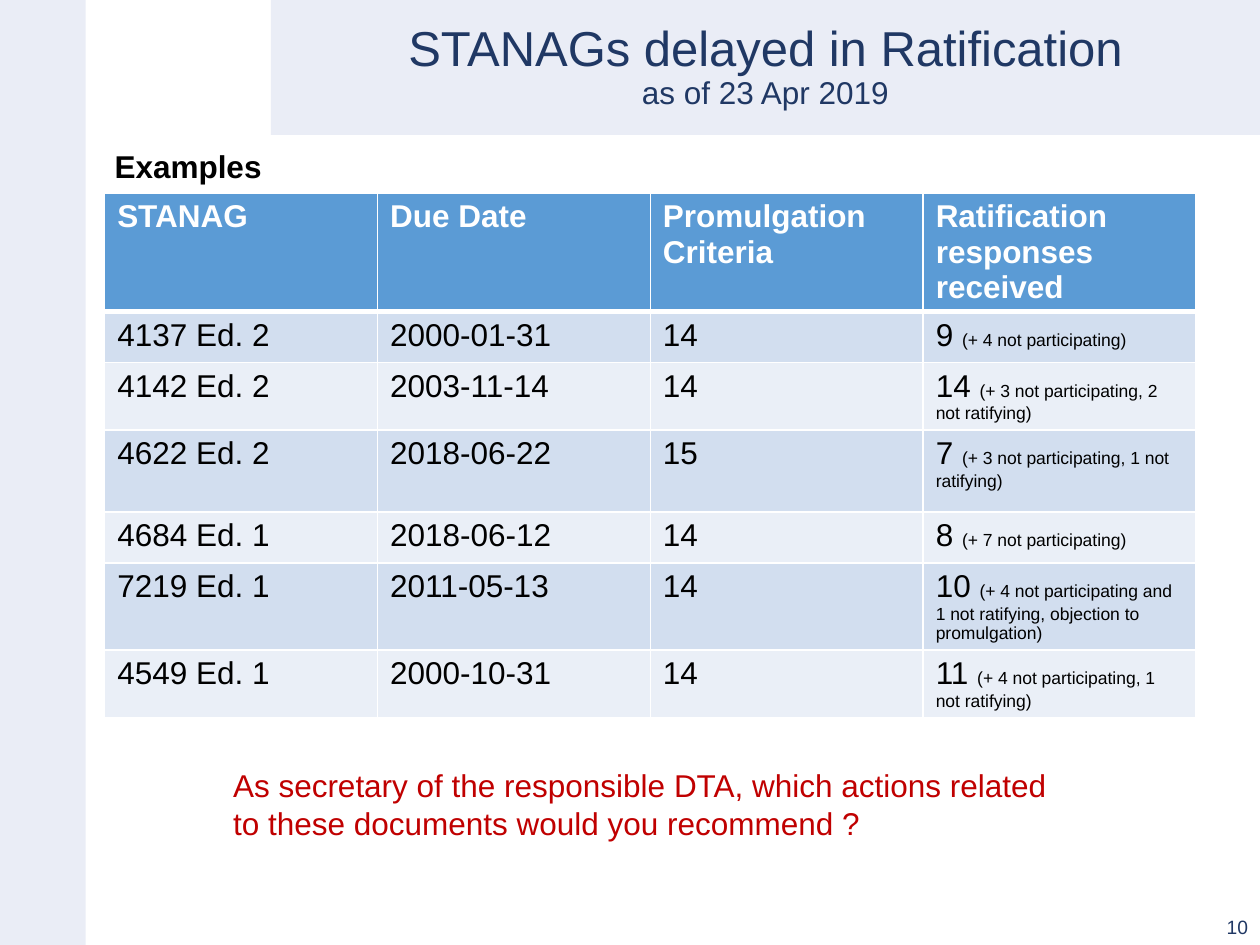
from lxml.etree import SubElement
from pptx import Presentation
from pptx.dml.color import RGBColor
from pptx.enum.shapes import MSO_SHAPE
from pptx.enum.text import MSO_ANCHOR, MSO_AUTO_SIZE, PP_ALIGN
from pptx.oxml.ns import qn
from pptx.util import Cm, Pt

PALE = RGBColor(0xEA, 0xED, 0xF6)
NAVY = RGBColor(0x20, 0x38, 0x64)
RED = RGBColor(0xC0, 0x00, 0x00)
BLACK = RGBColor(0x00, 0x00, 0x00)
WHITE = RGBColor(0xFF, 0xFF, 0xFF)
HEAD_BLUE = RGBColor(0x5B, 0x9B, 0xD5)
ROW_FILLS = [RGBColor(0xEA, 0xEF, 0xF7), RGBColor(0xD2, 0xDE, 0xEF)]


def add_run(p, text, size, color, bold=False):
    r = p.add_run()
    r.text = text
    for name, value in {"name": "Arial", "size": Pt(size), "bold": bold}.items():
        setattr(r.font, name, value)
    r.font.color.rgb = color


def set_borders(cell, bottom_width):
    """Draw white cell borders; call before the cell is filled."""
    tcPr = cell._tc.get_or_add_tcPr()
    widths = {"lnL": 1, "lnR": 1, "lnT": 1, "lnB": bottom_width}
    for tag, width in widths.items():
        ln = SubElement(tcPr, qn(f"a:{tag}"), w=str(Pt(width)))
        fill = SubElement(ln, qn("a:solidFill"))
        SubElement(fill, qn("a:srgbClr"), val=str(WHITE))


prs = Presentation()
prs.slide_width, prs.slide_height = Cm(25.4), Cm(19.05)
s = prs.slides.add_slide(prs.slide_layouts[5])

# Side and title bands, behind the title
title_box = Cm(5.46), Cm(0), Cm(19.94), Cm(2.72)
for box in [title_box, (Cm(0), Cm(0), Cm(1.73), Cm(19.05))]:
    sp = s.shapes.add_shape(MSO_SHAPE.RECTANGLE, *box)
    sp.shadow.inherit = False
    sp.fill.solid()
    sp.fill.fore_color.rgb = PALE
    sp.line.fill.background()
    s.shapes._spTree.insert(2, sp._element)

# Title
title = s.shapes.title
title.left, title.top, title.width, title.height = title_box
tf = title.text_frame
tf.auto_size = MSO_AUTO_SIZE.NONE
tf.vertical_anchor = MSO_ANCHOR.MIDDLE
p = tf.paragraphs[0]
p.alignment = PP_ALIGN.CENTER
p.line_spacing = 0.9
add_run(p, "STANAGs delayed in Ratification", 28, NAVY)
p.add_line_break()
add_run(p, "as of 23 Apr 2019", 18, NAVY)

# Table
headers = ["STANAG", "Due Date", "Promulgation Criteria",
           "Ratification responses received"]
rows = [
    ("4137 Ed. 2", "2000-01-31", "14", "9 ", "(+ 4 not participating)"),
    ("4142 Ed. 2", "2003-11-14", "14", "14 ",
     "(+ 3 not participating, 2 not ratifying)"),
    ("4622 Ed. 2", "2018-06-22", "15", "7 ",
     "(+ 3 not participating, 1 not ratifying)"),
    ("4684 Ed. 1", "2018-06-12", "14", "8 ", "(+ 7 not participating)"),
    ("7219 Ed. 1", "2011-05-13", "14", "10 ",
     "(+ 4 not participating and 1 not ratifying, objection to promulgation)"),
    ("4549 Ed. 1", "2000-10-31", "14", "11 ",
     "(+ 4 not participating, 1 not ratifying)"),
]
table = s.shapes.add_table(len(rows) + 1, len(headers), Cm(2.11), Cm(3.89),
                           Cm(22), Cm(7.83)).table
for row in table.rows:
    row.height = Cm(1.03)
table.rows[3].height = Cm(1.65)

for i, values in enumerate([headers] + rows):
    is_head = i == 0
    for j in range(len(headers)):
        cell = table.cell(i, j)
        set_borders(cell, 3 if is_head else 1)
        cell.fill.solid()
        cell.fill.fore_color.rgb = HEAD_BLUE if is_head else ROW_FILLS[i % 2]
        add_run(cell.text_frame.paragraphs[0], values[j], 18,
                WHITE if is_head else BLACK, is_head)
    if not is_head:
        add_run(cell.text_frame.paragraphs[0], values[-1], 10, BLACK)

# Text boxes: box, lines, size, colour, bold, alignment, anchor, autosize
LEFT, RIGHT = PP_ALIGN.LEFT, PP_ALIGN.RIGHT
TOP, BOTTOM = MSO_ANCHOR.TOP, MSO_ANCHOR.BOTTOM
GROW, FIXED = MSO_AUTO_SIZE.SHAPE_TO_FIT_TEXT, MSO_AUTO_SIZE.NONE
texts = [
    ((19.71, 18.03, 5.7, 1.02), ["10"], 11, NAVY, False, RIGHT, BOTTOM, FIXED),
    ((2.06, 2.84, 3.5, 1.03), ["Examples"], 18, BLACK, True, LEFT, TOP, GROW),
    ((4.45, 15.32, 17.07, 1.8),
     ["As secretary of the responsible DTA, which actions related",
      "to these documents would you recommend ?"],
     18, RED, False, LEFT, TOP, GROW),
]
for box, lines, size, color, bold, align, anchor, autosize in texts:
    tf = s.shapes.add_textbox(*map(Cm, box)).text_frame
    formats = {"word_wrap": autosize == FIXED, "auto_size": autosize,
               "vertical_anchor": anchor}
    for name, value in formats.items():
        setattr(tf, name, value)
    p = tf.paragraphs[0]
    p.alignment = align
    for n, line in enumerate(lines):
        if n:
            p.add_line_break()
        add_run(p, line, size, color, bold)

prs.save("out.pptx")
